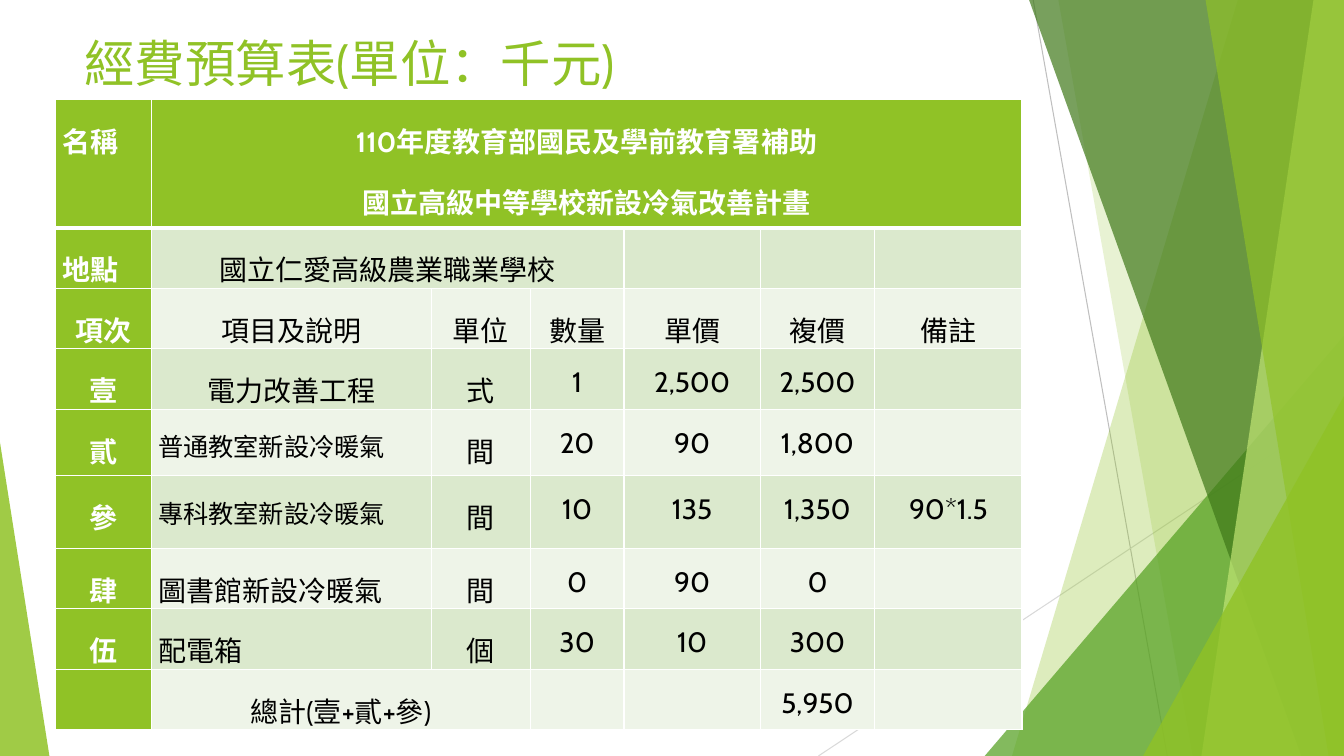
"""Build the air-conditioning budget slide with its faceted green background."""
from pptx import Presentation
from pptx.dml.color import RGBColor
from pptx.enum.shapes import MSO_CONNECTOR, MSO_SHAPE
from pptx.enum.text import MSO_ANCHOR, PP_ALIGN
from pptx.oxml.ns import qn
from pptx.util import Pt
from lxml import etree

STRAIGHT = MSO_CONNECTOR.STRAIGHT
TRIANGLE = MSO_SHAPE.ISOSCELES_TRIANGLE
TOP = MSO_ANCHOR.TOP
LEFT, CENTER, JUSTIFY = PP_ALIGN.LEFT, PP_ALIGN.CENTER, PP_ALIGN.JUSTIFY

FONT = "Cabin"
WIDTH, HEIGHT = 960, 540
COLORS = {
    "green": "90C226", "leaf": "54A021", "forest": "3F7819", "lime": "C0E474",
    "band": "DBE9CD", "pale": "EEF4E8", "white": "FFFFFF", "black": "000000",
    "gray": "BFBFBF", "silver": "D9D9D9",
}

TITLE = "經費預算表(單位：千元)"
BUDGET = [
    ["名稱", "110年度教育部國民及學前教育署補助\n國立高級中等學校新設冷氣改善計畫", "", "", "", "", ""],
    ["地點", "國立仁愛高級農業職業學校", "", "", "", "", ""],
    ["項次", "項目及說明", "單位", "數量", "單價", "複價", "備註"],
    ["壹", "電力改善工程", "式", "1", "2,500", "2,500", ""],
    ["貳", "普通教室新設冷暖氣", "間", "20", "90", "1,800", ""],
    ["參", "專科教室新設冷暖氣", "間", "10", "135", "1,350", "90*1.5"],
    ["肆", "圖書館新設冷暖氣", "間", "0", "90", "0", ""],
    ["伍", "配電箱", "個", "30", "10", "300", ""],
    ["", "總計(壹+貳+參)", "", "", "", "5,950", ""],
]
COLUMN_WIDTHS = [68.4, 200.2, 70.6, 67, 97.2, 82, 105.1]
ROW_HEIGHTS = [91.4, 43.2, 43.2, 43.2, 47.5, 51.8, 43.2, 43.2, 43.2]
SPANS = {0: 6, 1: 3, 8: 2}
JUSTIFIED = {(0, 0), (1, 0), (4, 1), (5, 1), (6, 1), (7, 1)}
SMALL = {(4, 1), (5, 1)}

RAYS = [
    ((738, 0), (833.8, 540), "gray"),
    ((960, 290.2), (584.6, 540), "silver"),
]
# facet: top x, bottom x, colour, opacity; wedge: left, top, width, apex, colour, opacity
FACETS = [
    ("facet", (884.2, 722.9), "green", 30),
    ("facet", (756, 851.8), "green", 20),
    ("wedge", (703.4, 239.8, 256.6, 1), "leaf", 72),
    ("facet", (735.1, 929.5), "forest", 70),
    ("facet", (938.2, 858.2), "lime", 70),
    ("facet", (861.1, 949), "green", 65),
    ("wedge", (816.5, 283, 143.5, 1), "green", 80),
    ("wedge", (0, 316.1, 35.3, 0), "green", 85),
]


def rgb(name):
    return RGBColor.from_string(COLORS[name])


def write(frame, text, *, size, color, bold=False, align=LEFT, spacing=1.0):
    frame.word_wrap = True
    for index, line in enumerate(text.split("\n")):
        paragraph = frame.add_paragraph() if index else frame.paragraphs[0]
        paragraph.alignment = align
        paragraph.line_spacing = spacing
        run = paragraph.add_run()
        run.text = line
        run.font.name = FONT
        run.font.size = Pt(size)
        run.font.bold = bold
        run.font.color.rgb = rgb(color)


def draw_ray(shapes, start, end, color):
    ray = shapes.add_connector(STRAIGHT, *map(Pt, start + end))
    ray.line.color.rgb = rgb(color)
    ray.line.width = Pt(0.75)
    etree.SubElement(ray.line._get_or_add_ln().getparent(), qn("a:effectLst"))


def draw_facet(shapes, kind, geometry, color, opacity):
    if kind == "facet":
        top_x, bottom_x = geometry
        outline = shapes.build_freeform(Pt(top_x), 0)
        outline.add_line_segments(
            [(Pt(WIDTH), 0), (Pt(WIDTH), Pt(HEIGHT)), (Pt(bottom_x), Pt(HEIGHT))])
        facet = outline.convert_to_shape()
    else:
        left, top, width, apex = geometry
        facet = shapes.add_shape(TRIANGLE, Pt(left), Pt(top), Pt(width), Pt(HEIGHT - top))
        facet.adjustments[0] = apex
    facet.shadow.inherit = False
    facet.line.fill.background()
    facet.fill.solid()
    facet.fill.fore_color.rgb = rgb(color)
    tint = next(facet.fill._xPr.iter(qn("a:srgbClr")))
    etree.SubElement(tint, qn("a:alpha"), val=str(opacity * 1000))


def draw_borders(cell, row):
    properties = cell._tc.get_or_add_tcPr()
    widths = {"lnL": 1, "lnR": 1, "lnT": 3 if row == 1 else 1, "lnB": 3 if row == 0 else 1}
    for side, width in widths.items():
        border = etree.SubElement(properties, qn(f"a:{side}"), w=str(Pt(width)))
        solid = etree.SubElement(border, qn("a:solidFill"))
        etree.SubElement(solid, qn("a:srgbClr"), val=COLORS["white"])


def fill_cell(cell, row, column, text):
    heading = row == 0 or column == 0
    draw_borders(cell, row)
    cell.fill.solid()
    cell.fill.fore_color.rgb = rgb("green" if heading else "band" if row % 2 else "pale")
    cell.margin_left = cell.margin_right = Pt(5)
    cell.margin_top = cell.margin_bottom = 0
    cell.vertical_anchor = TOP
    if text:
        write(cell.text_frame, text, size=18 if (row, column) in SMALL else 20,
              color="white" if heading else "black", bold=heading, spacing=1.5,
              align=JUSTIFY if (row, column) in JUSTIFIED else CENTER)


def draw_budget(shapes):
    table = shapes.add_table(len(BUDGET), len(COLUMN_WIDTHS), Pt(39.6), Pt(71.3),
                             Pt(sum(COLUMN_WIDTHS)), Pt(sum(ROW_HEIGHTS))).table
    table.first_row = table.horz_banding = False
    for column, width in zip(table.columns, COLUMN_WIDTHS):
        column.width = Pt(width)
    for row, height in zip(table.rows, ROW_HEIGHTS):
        row.height = Pt(height)
    for row, span in SPANS.items():
        table.cell(row, 1).merge(table.cell(row, span))
    for row, entries in enumerate(BUDGET):
        for column, text in enumerate(entries):
            fill_cell(table.cell(row, column), row, column, text)


def main():
    deck = Presentation()
    deck.slide_width, deck.slide_height = Pt(WIDTH), Pt(HEIGHT)
    shapes = deck.slides.add_slide(deck.slide_layouts[6]).shapes
    for ray in RAYS:
        draw_ray(shapes, *ray)
    for facet in FACETS:
        draw_facet(shapes, *facet)
    title = shapes.add_textbox(Pt(53.3), Pt(19.4), Pt(676.8), Pt(103.7))
    title.text_frame.vertical_anchor = TOP
    write(title.text_frame, TITLE, size=36, color="green")
    draw_budget(shapes)
    deck.save("out.pptx")


if __name__ == "__main__":
    main()
